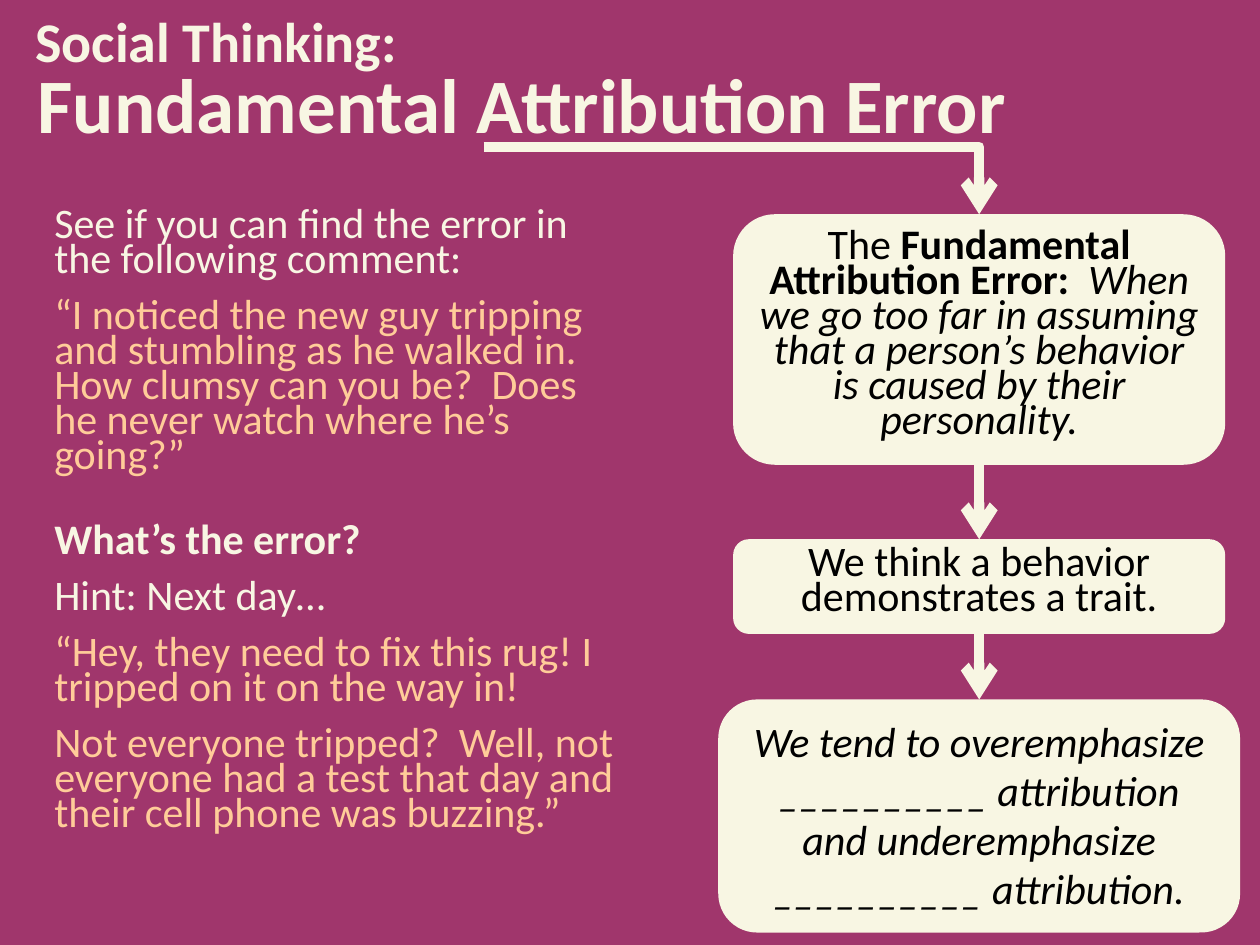
from collections import namedtuple
from dataclasses import dataclass

from lxml import etree
from pptx import Presentation
from pptx import util as u
from pptx.dml.color import RGBColor
from pptx.enum import shapes, text
from pptx.oxml import ns

Box = namedtuple("Box", "left top width height")  # centimetres


@dataclass(frozen=True)
class Theme:
    font: str = "Calibri"
    plum: RGBColor = RGBColor(0xA0, 0x36, 0x6C)
    cream: RGBColor = RGBColor(0xF8, 0xF6, 0xE3)
    peach: RGBColor = RGBColor(0xFF, 0xCC, 0x99)
    black: RGBColor = RGBColor(0, 0, 0)
    title_size: int = 44
    kicker_size: int = 32
    body_size: int = 24
    arrow_width: int = 6


THEME = Theme()


def place(shape, box):
    shape.left, shape.top, shape.width, shape.height = map(u.Cm, box)


def style(paragraph, size, color, bold=None, italic=None):
    font = paragraph.font
    font.name, font.size, font.color.rgb = THEME.font, u.Pt(size), color
    font.bold, font.italic = bold, italic


def prepare_frame(shape, anchor):
    frame = shape.text_frame
    frame.word_wrap = True
    frame.auto_size = text.MSO_AUTO_SIZE.NONE
    frame.vertical_anchor = anchor
    return frame


def add_heading(slide, box):
    """Small kicker line above the large title."""
    title = slide.shapes.title
    place(title, box)
    frame = prepare_frame(title, text.MSO_ANCHOR.TOP)
    frame.margin_left, frame.margin_top = u.Cm(0.76), u.Cm(box.height / 2)
    frame.margin_bottom = 0
    paragraph = frame.paragraphs[0]
    paragraph.text = "Fundamental Attribution Error"
    paragraph.alignment = text.PP_ALIGN.LEFT
    paragraph.line_spacing = u.Pt(42)
    style(paragraph, THEME.title_size, THEME.cream, bold=True)

    kicker = slide.shapes.add_textbox(0, 0, 0, 0)
    place(kicker, Box(box.left + 0.46, box.top, 10.92, 1.63))
    paragraph = prepare_frame(kicker, text.MSO_ANCHOR.TOP).paragraphs[0]
    paragraph.text = "Social Thinking:"
    style(paragraph, THEME.kicker_size, THEME.cream, bold=True)


def add_comments(placeholder, box, lines):
    """Unbulleted paragraphs, each given as (wording, colour, bold)."""
    place(placeholder, box)
    frame = prepare_frame(placeholder, text.MSO_ANCHOR.MIDDLE)
    for index, (wording, color, bold) in enumerate(lines):
        paragraph = frame.add_paragraph() if index else frame.paragraphs[0]
        paragraph.text = wording
        paragraph.line_spacing = u.Pt(20)
        paragraph.space_before, paragraph.space_after = 0, u.Pt(12)
        style(paragraph, THEME.body_size, color, bold)
        properties = paragraph._p.get_or_add_pPr()
        properties.set("marL", "0")
        properties.set("indent", "0")
        etree.SubElement(properties, ns.qn("a:buNone"))
        # Bullet settings come before the default run properties
        properties.append(properties.find(ns.qn("a:defRPr")))


def add_card(slide, box, runs, spacing=20, italic=None):
    """Rounded card; runs are (wording, bold, italic)."""
    card = slide.shapes.add_shape(shapes.MSO_SHAPE.ROUNDED_RECTANGLE, 0, 0, 0, 0)
    place(card, box)
    card.shadow.inherit = False
    card.fill.solid()
    card.fill.fore_color.rgb = THEME.cream
    card.line.fill.background()
    paragraph = prepare_frame(card, text.MSO_ANCHOR.TOP).paragraphs[0]
    paragraph.alignment = text.PP_ALIGN.CENTER
    paragraph.line_spacing = u.Pt(spacing)
    style(paragraph, THEME.body_size, THEME.black, italic=italic)
    for wording, run_bold, run_italic in runs:
        run = paragraph.add_run()
        run.text = wording
        run.font.bold, run.font.italic = run_bold, run_italic
    return card


def add_arrow(slide, kind, target, source=None, start=(0, 0)):
    """Arrow into the top of target, from a source card or a start point."""
    arrow = slide.shapes.add_connector(kind, *map(u.Cm, start), 0, 0)
    if source is not None:
        arrow.begin_connect(source, 2)
    arrow.end_connect(target, 0)
    arrow.line.color.rgb = THEME.cream
    arrow.line.width = u.Pt(THEME.arrow_width)
    etree.SubElement(arrow.line._get_or_add_ln(), ns.qn("a:tailEnd"), type="arrow")
    properties = arrow._element.spPr
    etree.SubElement(properties, ns.qn("a:effectLst"))
    if kind == shapes.MSO_CONNECTOR.ELBOW:
        # A single bend: across, then down
        properties.find(ns.qn("a:prstGeom")).set("prst", "bentConnector2")


def add_flow(slide, box):
    """Cards centred in one column, chained by arrows from the title."""
    inset = 0.3
    narrow = box.width - 2 * inset
    definition = add_card(
        slide, Box(box.left + inset, box.top, narrow, 5.05),
        [("The ", None, None),
         ("Fundamental Attribution Error:  ", True, None),
         ("When we go too far in assuming that a person’s behavior "
          "is caused by their personality.", None, True)])
    trait = add_card(
        slide, Box(box.left + inset, box.top + 6.55, narrow, 1.91),
        [("We think a behavior demonstrates a trait.", None, None)])
    emphasis = add_card(
        slide, Box(box.left, box.top + box.height - 4.7, box.width, 4.7),
        [("We tend to overemphasize __________ attribution and "
          "underemphasize __________ attribution.", None, None)],
        spacing=28, italic=True)

    add_arrow(slide, shapes.MSO_CONNECTOR.ELBOW, definition,
              start=(box.left - 4.73, box.top - 1.36))
    for source, target in ((definition, trait), (trait, emphasis)):
        add_arrow(slide, shapes.MSO_CONNECTOR.STRAIGHT, target, source)


def main():
    presentation = Presentation()
    presentation.slide_width, presentation.slide_height = u.Cm(25.4), u.Cm(19.05)
    slide = presentation.slides.add_slide(presentation.slide_layouts[3])
    slide.background.fill.solid()
    slide.background.fill.fore_color.rgb = THEME.plum

    add_heading(slide, Box(0, 0, 25.4, 3.05))

    # Left column: the comment, then the hint
    add_comments(slide.placeholders[1], Box(0.84, 3.86, 11.58, 6.17), [
        ("See if you can find the error in the following comment:",
         THEME.cream, None),
        ("“I noticed the new guy tripping and stumbling as he walked in.  "
         "How clumsy can you be?  Does he never watch where he’s going?”",
         THEME.peach, None)])
    add_comments(slide.placeholders[2], Box(0.84, 10.01, 12.19, 7.49), [
        ("What’s the error?", THEME.cream, True),
        ("Hint: Next day…", THEME.cream, None),
        ("“Hey, they need to fix this rug! I tripped on it on the way in!",
         THEME.peach, None),
        ("Not everyone tripped?  Well, not everyone had a test that day "
         "and their cell phone was buzzing.”", THEME.peach, None)])

    # Right column: definition, mistake and its effect
    add_flow(slide, Box(14.48, 4.32, 10.52, 14.48))

    presentation.save("out.pptx")


if __name__ == "__main__":
    main()
